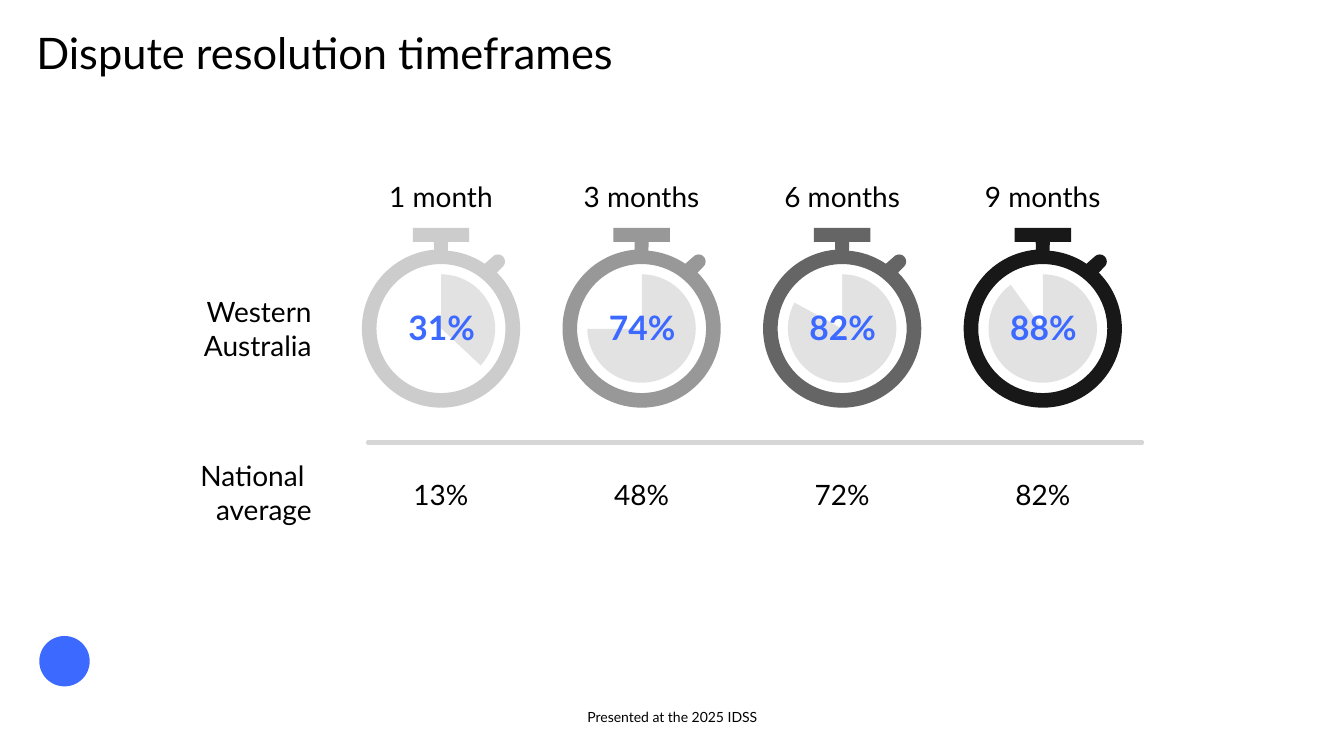
from dataclasses import dataclass
from math import cos, radians, sin

from lxml import etree
from pptx import Presentation
from pptx.chart.data import CategoryChartData
from pptx.dml.color import RGBColor
from pptx.enum.chart import XL_CHART_TYPE
from pptx.enum.shapes import MSO_CONNECTOR, MSO_SHAPE
from pptx.enum.text import MSO_ANCHOR, PP_ALIGN
from pptx.oxml import parse_xml
from pptx.oxml.ns import nsdecls, qn
from pptx.util import Inches, Pt

PIE = XL_CHART_TYPE.PIE
STRAIGHT = MSO_CONNECTOR.STRAIGHT
OVAL = MSO_SHAPE.OVAL
TOP, MIDDLE, BOTTOM = MSO_ANCHOR.TOP, MSO_ANCHOR.MIDDLE, MSO_ANCHOR.BOTTOM
LEFT, CENTER, RIGHT = PP_ALIGN.LEFT, PP_ALIGN.CENTER, PP_ALIGN.RIGHT
CELL = Inches(0.1)
COLUMNS, ROWS = 133.33, 75
TITLE_ONLY = 5


@dataclass(frozen=True)
class Theme:
    font: str = "Lato"
    text: str = "000000"
    accent: str = "3C69FF"
    elapsed: str = "E2E2E2"
    remaining: str = "FFFFFF"
    rule: str = "D6D6D6"
    title_size: float = 31
    value_size: float = 24
    label_size: float = 20
    small_size: float = 10
    rule_width: float = 3


@dataclass(frozen=True)
class Box:
    left: float
    top: float
    width: float
    height: float

    def area(self, left, top, width, height):
        return Box(self.left + left, self.top + top, width, height)

    def lengths(self):
        return [cells(value) for value in (self.left, self.top, self.width, self.height)]


@dataclass(frozen=True)
class Period:
    label: str
    western: str
    national: str
    elapsed: int
    color: str


THEME = Theme()
PERIODS = [
    Period("1 month", "31%", "13%", 37, "CCCCCC"),
    Period("3 months", "74%", "48%", 75, "989898"),
    Period("6 months", "82%", "72%", 83, "656565"),
    Period("9 months", "88%", "82%", 90, "181818"),
]


def cells(count):
    return round(count * CELL)


def color(code):
    return RGBColor.from_string(code)


def style_font(font, size, code=THEME.text, bold=False):
    font.name = THEME.font
    font.size = Pt(size)
    font.bold = bold
    font.color.rgb = color(code)


def fill_text(frame, lines, size, align, anchor, code=THEME.text, bold=False, inset=0):
    frame.word_wrap = True
    frame.vertical_anchor = anchor
    frame.margin_left = frame.margin_right = cells(inset)
    frame.margin_top = frame.margin_bottom = cells(inset / 2)
    frame.text = "\n".join(lines)
    for paragraph in frame.paragraphs:
        paragraph.alignment = align
        style_font(paragraph.font, size, code, bold)


def add_text(slide, box, lines, size, align, anchor=MIDDLE, **options):
    shape = slide.shapes.add_textbox(*box.lengths())
    fill_text(shape.text_frame, lines, size, align, anchor, **options)


def paint(shape, code):
    shape.fill.solid()
    shape.fill.fore_color.rgb = color(code)
    shape.line.fill.background()
    shape.shadow.inherit = False


def add_title(slide, box):
    title = slide.shapes.title
    title.left, title.top, title.width, title.height = box.lengths()
    fill_text(title.text_frame, ["Dispute resolution timeframes"], THEME.title_size, LEFT, TOP)
    title.text_frame.paragraphs[0].line_spacing = 0.9


def add_pie(slide, box, elapsed):
    data = CategoryChartData()
    data.categories = ["1", "2"]
    data.add_series("Series 1", [elapsed, 100 - elapsed])
    chart = slide.shapes.add_chart(PIE, *box.lengths(), data).chart
    chart.has_legend = False
    chart.has_title = False
    style_font(chart.font, THEME.small_size)
    plot = chart.plots[0]
    plot.vary_by_categories = False
    for index, code in enumerate([THEME.elapsed, THEME.remaining]):
        point = plot.series[0].points[index]
        point.format.fill.solid()
        point.format.fill.fore_color.rgb = color(code)
        point.format.line.fill.background()
    plot_area = chart.element.find(".//" + qn("c:plotArea"))
    for layout in plot_area.findall(qn("c:layout")):
        plot_area.remove(layout)
    layout = parse_xml(f"<c:layout {nsdecls('c')}><c:manualLayout/></c:layout>")
    settings = {"layoutTarget": "inner", "xMode": "edge", "yMode": "edge",
                "x": "0.11", "y": "0.11", "w": "0.78", "h": "0.78"}
    for name, value in settings.items():
        etree.SubElement(layout[0], qn(f"c:{name}")).set("val", value)
    plot_area.insert(0, layout)


def arc(center_x, center_y, radius, start, end, steps):
    angles = [radians(start + (end - start) * step / steps) for step in range(steps + 1)]
    return [(center_x + radius * cos(angle), center_y + radius * sin(angle)) for angle in angles]


def add_stopwatch(slide, box, code):
    center_x, center_y = box.left + box.width / 2, box.top + 10
    stem = [(-0.7, -8.6), (-2.8, -8.6), (-2.8, -10), (2.8, -10), (2.8, -8.6), (0.7, -8.6)]
    body = arc(0, 0, 7.85, -45, 265, 90)
    shoulder = arc(0, 0, 7.75, -85, -56, 10)
    button = arc(5.65, -6.65, 0.7, -135, 45, 12)
    face = arc(0, 0, 6.4, 0, 360, 90)
    outline, opening = [
        [(cells(center_x + x), cells(center_y + y)) for x, y in contour]
        for contour in (body + stem + shoulder + button, face)
    ]
    builder = slide.shapes.build_freeform(*outline[0])
    builder.add_line_segments(outline[1:])
    builder.move_to(*opening[0])
    builder.add_line_segments(opening[1:])
    paint(builder.convert_to_shape(), code)


def add_period(slide, box, period):
    add_pie(slide, box.area(0.95, 7.95, 13.8, 13.8), period.elapsed)
    add_stopwatch(slide, box.area(0, 4.85, box.width, 17.7), period.color)
    add_text(slide, box.area(3.95, 12.65, 7.9, 4), [period.western], THEME.value_size,
             CENTER, code=THEME.accent, bold=True)
    add_text(slide, box.area(0, 0, box.width, 3.4), [period.label], THEME.label_size, CENTER)
    add_text(slide, box.area(4.45, 29.55, 6.8, 3.4), [period.national], THEME.label_size, CENTER)


def add_comparison(slide, box):
    for top, lines in ((10.95, ["Western", "Australia"]), (27.25, ["National ", "average"])):
        add_text(slide, box.area(0, top, 25.4, 7.7), lines, THEME.label_size, RIGHT, inset=1)
    for index, period in enumerate(PERIODS):
        add_period(slide, box.area(29.4 + 19.9 * index, 0, 15.7, box.height), period)
    left, right, height = (cells(value) for value in (box.left + 30, box.left + box.width, box.top + 26.15))
    rule = slide.shapes.add_connector(STRAIGHT, left, height, right, height)
    rule.line.color.rgb = color(THEME.rule)
    rule.line.width = Pt(THEME.rule_width)
    properties = rule._element.spPr
    properties.find(qn("a:ln")).set("cap", "rnd")
    etree.SubElement(properties, qn("a:effectLst"))


def add_footer(slide, box):
    paint(slide.shapes.add_shape(OVAL, *box.area(3.9, 0, 5, 5).lengths()), THEME.accent)
    add_text(slide, box.area(44.2, 6.9, 45, 2), ["Presented at the 2025 IDSS"],
             THEME.small_size, CENTER, BOTTOM)


def main():
    presentation = Presentation()
    presentation.slide_width = cells(COLUMNS)
    presentation.slide_height = cells(ROWS)
    slide = presentation.slides.add_slide(presentation.slide_layouts[TITLE_ONLY])
    add_title(slide, Box(3.6, 3.2, 81.5, 13.5))
    add_comparison(slide, Box(6.5, 17.75, 106.8, 34.95))
    add_footer(slide, Box(0, 63.1, COLUMNS, 11.9))
    presentation.save("out.pptx")


if __name__ == "__main__":
    main()
